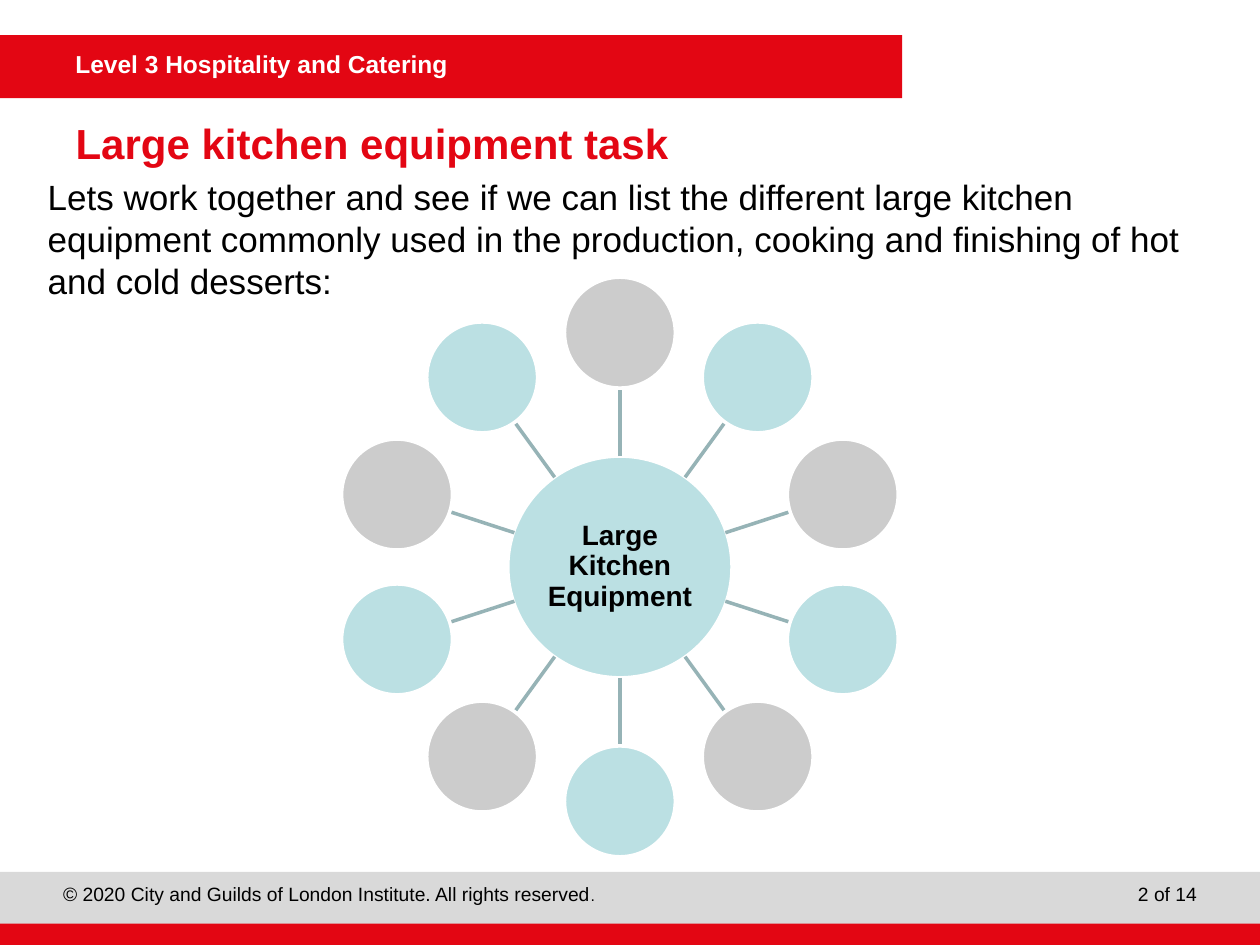
"""Build the large kitchen equipment task slide with its radial diagram."""
import math

import lxml.etree
import pptx
import pptx.dml.color
import pptx.enum.shapes
import pptx.enum.text
import pptx.oxml.ns
import pptx.util

Inches = pptx.util.Inches
Pt = pptx.util.Pt
RGBColor = pptx.dml.color.RGBColor
MSO_SHAPE = pptx.enum.shapes.MSO_SHAPE
PP_ALIGN = pptx.enum.text.PP_ALIGN
MSO_ANCHOR = pptx.enum.text.MSO_ANCHOR

RED = RGBColor(0xE3, 0x06, 0x13)
WHITE = RGBColor(0xFF, 0xFF, 0xFF)
BLACK = RGBColor(0x00, 0x00, 0x00)
FOOTER_GREY = RGBColor(0xD9, 0xD9, 0xD9)
AQUA = RGBColor(0xBB, 0xE0, 0xE3)
NODE_GREY = RGBColor(0xCC, 0xCC, 0xCC)
SPOKE = RGBColor(0x96, 0xB3, 0xB6)


def add_filled(kind, left, top, width, height, fill, outline=None):
    shape = slide.shapes.add_shape(
        kind, Inches(left), Inches(top), Inches(width), Inches(height))
    shape.shadow.inherit = False
    shape.fill.solid()
    shape.fill.fore_color.rgb = fill
    if outline is None:
        shape.line.fill.background()
    else:
        shape.line.color.rgb = outline
        shape.line.width = Pt(2)
    return shape


def write(frame, text, size, color, bold=False, inset=None):
    frame.word_wrap = True
    frame.text = text
    if inset is not None:
        frame.margin_left = frame.margin_right = Inches(inset)
        frame.margin_top = frame.margin_bottom = Inches(inset)
    paragraph = frame.paragraphs[0]
    for run in paragraph.runs:
        run.font.name = "Arial"
        run.font.size = Pt(size)
        run.font.bold = bold
        run.font.color.rgb = color
    return paragraph


deck = pptx.Presentation()
deck.slide_width = Inches(10)
deck.slide_height = Inches(7.5)
slide = deck.slides.add_slide(deck.slide_layouts[5])

for left, top, width, height, fill in [
    (0, 0.28, 7.16, 0.5, RED),
    (0, 6.92, 10, 0.42, FOOTER_GREY),
    (0, 7.33, 10, 0.17, RED),
]:
    add_filled(MSO_SHAPE.RECTANGLE, left, top, width, height, fill)

course = slide.shapes.add_textbox(Inches(0.5), Inches(0.34), Inches(6.66), Inches(0.34))
write(course.text_frame, "Level 3 Hospitality and Catering", 14, WHITE, bold=True)

rights = slide.shapes.add_textbox(Inches(0.5), Inches(7), Inches(7.08), Inches(0.25))
rights_line = write(
    rights.text_frame,
    "© 2020 City and Guilds of London Institute. All rights reserved",
    11, BLACK, inset=0)
full_stop = rights_line.add_run()
full_stop.text = "."
full_stop.font.name = "Arial"
full_stop.font.size = Pt(9)
full_stop.font.color.rgb = BLACK

page = slide.shapes.add_textbox(Inches(7.92), Inches(7), Inches(1.58), Inches(0.25))
write(page.text_frame, "2 of 14", 11, BLACK, inset=0).alignment = PP_ALIGN.RIGHT

title = slide.shapes.title
title.left, title.top = Inches(0.5), Inches(0.92)
title.width, title.height = Inches(8.99), Inches(0.42)
title.text_frame.vertical_anchor = MSO_ANCHOR.MIDDLE
heading = write(title.text_frame, "Large kitchen equipment task", 24, RED, bold=True)
heading.alignment = PP_ALIGN.LEFT

task = slide.shapes.add_textbox(Inches(0.28), Inches(1.34), Inches(9.45), Inches(1.1))
instruction = write(
    task.text_frame,
    "Lets work together and see if we can list the different large kitchen "
    "equipment commonly used in the production, cooking and finishing of hot "
    "and cold desserts:",
    20, BLACK)
instruction.line_spacing = Pt(24)

CENTRE_X, CENTRE_Y = 4.92, 4.5
HUB_WIDTH, HUB_HEIGHT = 1.78, 1.76
NODE_SIZE = 0.88
NODE_COUNT = 10
ORBIT = 1.86
SPOKE_START, SPOKE_END = 0.88, 1.42

hub = add_filled(
    MSO_SHAPE.OVAL, CENTRE_X - HUB_WIDTH / 2, CENTRE_Y - HUB_HEIGHT / 2,
    HUB_WIDTH, HUB_HEIGHT, AQUA, WHITE)
hub.text_frame.vertical_anchor = MSO_ANCHOR.MIDDLE
hub_label = write(
    hub.text_frame, "Large Kitchen Equipment", 16, BLACK, bold=True, inset=0.01)
hub_label.alignment = PP_ALIGN.CENTER
hub_label.line_spacing = 0.9

for index in range(NODE_COUNT):
    angle = 2 * math.pi * index / NODE_COUNT
    across, down = math.sin(angle), -math.cos(angle)
    spoke = slide.shapes.add_connector(
        pptx.enum.shapes.MSO_CONNECTOR.STRAIGHT,
        Inches(CENTRE_X + SPOKE_START * across), Inches(CENTRE_Y + SPOKE_START * down),
        Inches(CENTRE_X + SPOKE_END * across), Inches(CENTRE_Y + SPOKE_END * down))
    spoke.line.color.rgb = SPOKE
    spoke.line.width = Pt(2)
    lxml.etree.SubElement(spoke._element.spPr, pptx.oxml.ns.qn("a:effectLst"))
    add_filled(
        MSO_SHAPE.OVAL,
        CENTRE_X + ORBIT * across - NODE_SIZE / 2,
        CENTRE_Y + ORBIT * down - NODE_SIZE / 2,
        NODE_SIZE, NODE_SIZE, AQUA if index % 2 else NODE_GREY, WHITE)

deck.save("out.pptx")
